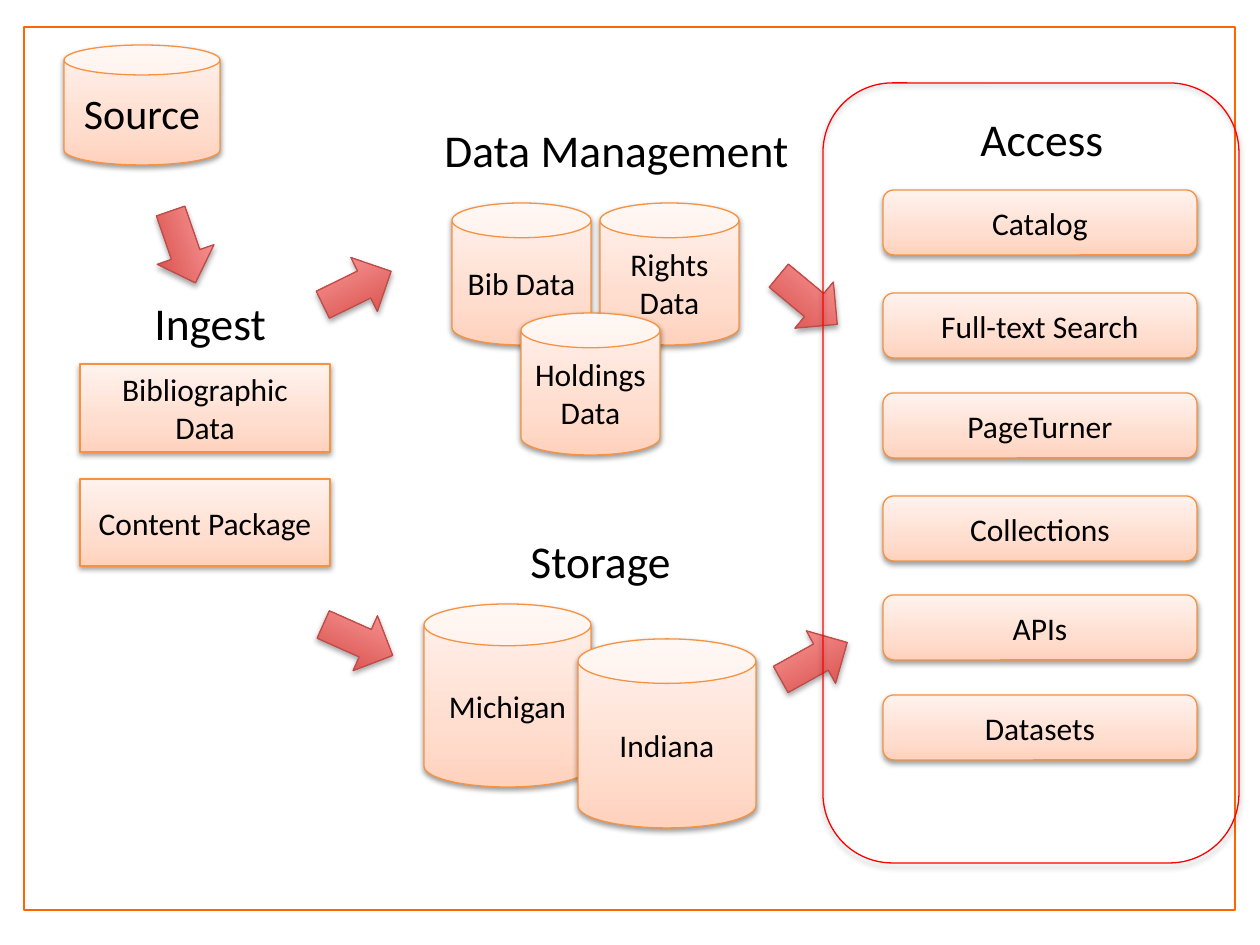
import dataclasses
import typing

import lxml.etree
import pptx
import pptx.dml.color
import pptx.enum.shapes
import pptx.enum.text
import pptx.oxml.ns
import pptx.util

PIXELS_PER_INCH = 126
FONT = "Calibri"
PEACH = ((0, "FFD2BD"), (35, "FFDED0"), (100, "FFF2ED"))
RED = ((0, "D1403C"), (100, "FFA6A5"))
Kind = pptx.enum.shapes.MSO_SHAPE


@dataclasses.dataclass
class Node:
    kind: Kind
    label: str
    left: int
    top: int
    width: int
    height: int
    size: int = 18


@dataclasses.dataclass
class Heading:
    label: str
    left: int
    top: int
    width: int


@dataclasses.dataclass
class Arrow:
    left: int
    top: int
    rotation: float


STORES = [
    Node(Kind.CAN, "Source", 64, 45, 156, 120, 24),
    Node(Kind.RECTANGLE, "Bibliographic Data", 80, 364, 250, 88),
    Node(Kind.RECTANGLE, "Content Package", 80, 479, 250, 87),
    Node(Kind.CAN, "Bib Data", 452, 203, 139, 142),
    Node(Kind.CAN, "Rights Data", 600, 203, 139, 142),
    Node(Kind.CAN, "Holdings Data", 521, 313, 139, 142),
    Node(Kind.CAN, "Michigan", 424, 604, 167, 183),
    Node(Kind.CAN, "Indiana", 578, 639, 178, 189),
]
SERVICES = {
    "Catalog": 190,
    "Full-text Search": 293,
    "PageTurner": 393,
    "Collections": 496,
    "APIs": 595,
    "Datasets": 695,
}
HEADINGS = [
    Heading("Data Management", 432, 116, 451),
    Heading("Storage", 518, 527, 223),
    Heading("Access", 968, 105, 251),
    Heading("Ingest", 142, 289, 203),
]
ARROWS = [
    Arrow(145, 217, 70.9),
    Arrow(319, 258, 333.9),
    Arrow(320, 610, 24),
    Arrow(770, 270, 39.8),
    Arrow(776, 631, 330.9),
]


def px(length: int) -> pptx.util.Emu:
    return pptx.util.Emu(round(length * 914400 / PIXELS_PER_INCH))


def color(value: str) -> pptx.dml.color.RGBColor:
    return pptx.dml.color.RGBColor.from_string(value)


def add_element(parent: typing.Any, tag: str, **attributes: typing.Any) -> typing.Any:
    values = {name: str(value) for name, value in attributes.items()}
    return lxml.etree.SubElement(parent, pptx.oxml.ns.qn(tag), values)


def add_outline(page, kind: Kind, left: int, top: int, width: int, height: int,
                line: str, weight: float = 0.75):
    shape = page.shapes.add_shape(kind, px(left), px(top), px(width), px(height))
    shape.shadow.inherit = False
    shape.fill.background()
    shape.line.color.rgb = color(line)
    shape.line.width = pptx.util.Pt(weight)
    return shape


def set_gradient(shape, stops: typing.Sequence[tuple[int, str]]) -> None:
    shape.fill.gradient()
    shape.fill.gradient_angle = 90
    stop_list = shape.element.spPr.find(".//" + pptx.oxml.ns.qn("a:gsLst"))
    for stop in list(stop_list):
        stop_list.remove(stop)
    for position, value in stops:
        stop = add_element(stop_list, "a:gs", pos=position * 1000)
        add_element(stop, "a:srgbClr", val=value)


def add_shadow(shape, distance: int, opacity: int) -> None:
    effects = shape.element.spPr.find(pptx.oxml.ns.qn("a:effectLst"))
    shadow = add_element(effects, "a:outerShdw", blurRad=40000, dist=distance,
                         dir=5400000, rotWithShape=0)
    black = add_element(shadow, "a:srgbClr", val="000000")
    add_element(black, "a:alpha", val=opacity * 1000)


def write_label(box, label: str, size: int, alignment) -> None:
    frame = box.text_frame
    frame.word_wrap = True
    frame.text = label
    para = frame.paragraphs[0]
    para.alignment = alignment
    span = para.runs[0]
    span.font.name = FONT
    span.font.size = pptx.util.Pt(size)
    span.font.color.rgb = color("000000")


def draw_node(page, node: Node) -> None:
    shape = add_outline(page, node.kind, node.left, node.top, node.width,
                        node.height, "F69240")
    set_gradient(shape, PEACH)
    add_shadow(shape, 20000, 38)
    shape.text_frame.vertical_anchor = pptx.enum.text.MSO_ANCHOR.MIDDLE
    write_label(shape, node.label, node.size, pptx.enum.text.PP_ALIGN.CENTER)


def draw_heading(page, heading: Heading) -> None:
    box = page.shapes.add_textbox(px(heading.left), px(heading.top),
                                  px(heading.width), px(68))
    write_label(box, heading.label, 26, pptx.enum.text.PP_ALIGN.LEFT)
    box.text_frame.auto_size = pptx.enum.text.MSO_AUTO_SIZE.SHAPE_TO_FIT_TEXT


def draw_arrow(page, arrow: Arrow) -> None:
    shape = add_outline(page, Kind.RIGHT_ARROW, arrow.left, arrow.top, 76, 60, "BF4C48")
    set_gradient(shape, RED)
    add_shadow(shape, 23000, 35)
    shape.rotation = arrow.rotation


def main() -> None:
    deck = pptx.Presentation()
    deck.slide_width = pptx.util.Inches(10)
    deck.slide_height = pptx.util.Inches(7.5)
    page = deck.slides.add_slide(deck.slide_layouts[6])

    frame = add_outline(page, Kind.RECTANGLE, 24, 27, 1211, 883, "FF6600", 1)
    frame.fill.solid()
    frame.fill.fore_color.rgb = color("FFFFFF")

    for store in STORES:
        draw_node(page, store)
    for heading in HEADINGS:
        draw_heading(page, heading)
    for label, top in SERVICES.items():
        draw_node(page, Node(Kind.ROUNDED_RECTANGLE, label, 883, top, 314, 65))
    for arrow in ARROWS:
        draw_arrow(page, arrow)

    access_panel = add_outline(page, Kind.ROUNDED_RECTANGLE, 823, 83, 416, 780, "FF0000")
    add_shadow(access_panel, 23000, 35)
    deck.save("out.pptx")


if __name__ == "__main__":
    main()
